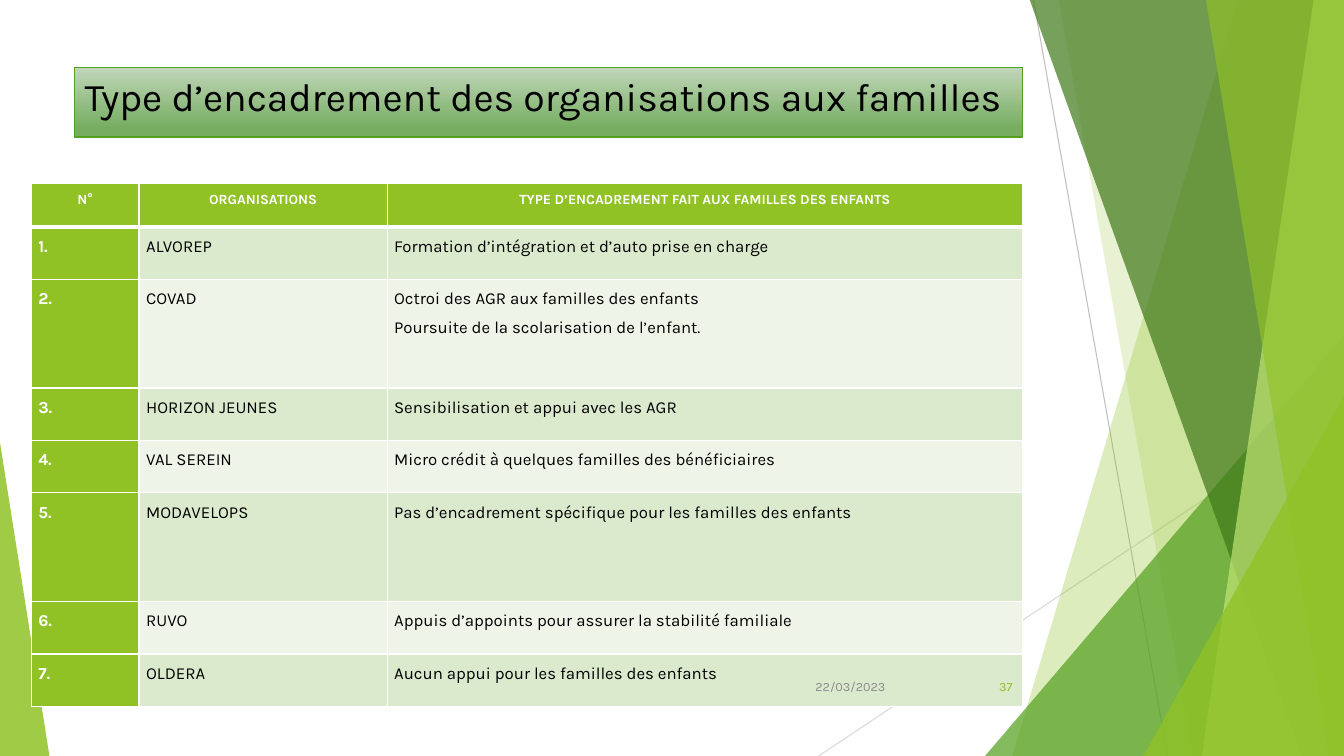
"""Build the slide on how the organisations support the families."""
from lxml import etree
from pptx import Presentation
from pptx import util as u
from pptx.dml.color import RGBColor
from pptx.enum import shapes, text
from pptx.oxml.ns import qn

FONT = "Karla"
WHITE = RGBColor(0xFF, 0xFF, 0xFF)
BLACK = RGBColor(0, 0, 0)
GREY = RGBColor(0x8C, 0x8C, 0x8C)
LINE_GREY = RGBColor(0xBF, 0xBF, 0xBF)
LINE_LIGHT = RGBColor(0xD9, 0xD9, 0xD9)
LIME = RGBColor(0x90, 0xC2, 0x26)
PALE_LIME = RGBColor(0xC0, 0xE4, 0x74)
GREEN = RGBColor(0x54, 0xA0, 0x21)
DARK_GREEN = RGBColor(0x3F, 0x78, 0x19)
TITLE_TOP = RGBColor(0xC0, 0xD6, 0xB9)
TITLE_BOTTOM = RGBColor(0x76, 0xAD, 0x61)
BAND_DARK = RGBColor(0xDB, 0xE9, 0xCD)
BAND_LIGHT = RGBColor(0xEE, 0xF4, 0xE8)
LEFT, CENTER = text.PP_ALIGN.LEFT, text.PP_ALIGN.CENTER
RIGHT, JUSTIFY = text.PP_ALIGN.RIGHT, text.PP_ALIGN.JUSTIFY


def write(tf, content, size, color, bold=False, align=LEFT, spacing=1.0,
          anchor=text.MSO_ANCHOR.TOP):
    tf.word_wrap = True
    tf.vertical_anchor = anchor
    for i, line in enumerate(content.split("\n")):
        p = tf.paragraphs[0] if i == 0 else tf.add_paragraph()
        p.alignment = align
        p.line_spacing = spacing
        r = p.add_run()
        r.text = line
        r.font.name = FONT
        r.font.size = u.Pt(size)
        r.font.bold = bold
        r.font.color.rgb = color


def paint(sp, color, opacity):
    sp.shadow.inherit = False
    sp.line.fill.background()
    sp.fill.solid()
    sp.fill.fore_color.rgb = color
    clr = sp.fill._xPr.find(qn("a:solidFill"))[0]
    etree.SubElement(clr, qn("a:alpha")).set("val", str(opacity * 1000))


prs = Presentation()
prs.slide_width, prs.slide_height = u.Inches(13.33), u.Inches(7.5)
s = prs.slides.add_slide(prs.slide_layouts[6])

for x1, y1, x2, y2, color in [(10.25, 0, 11.58, 7.5, LINE_GREY),
                              (13.33, 4.03, 8.12, 7.5, LINE_LIGHT)]:
    ln = s.shapes.add_connector(shapes.MSO_CONNECTOR.STRAIGHT, u.Inches(x1),
                                u.Inches(y1), u.Inches(x2), u.Inches(y2))
    ln.line.color.rgb = color
    ln.line.width = u.Pt(0.75)
    etree.SubElement(ln._element.spPr, qn("a:effectLst"))

facets = [
    ((12.28, 10.04), LIME, 30),
    ((10.5, 11.83), LIME, 20),
    ((9.77, 3.33, 3.56, 4.17, 1), GREEN, 72),
    ((10.21, 12.91), DARK_GREEN, 70),
    ((13.03, 11.92), PALE_LIME, 70),
    ((11.96, 13.18), LIME, 65),
    ((11.34, 3.93, 1.99, 3.57, 1), LIME, 80),
    ((0, 4.39, 0.49, 3.11, 0), LIME, 85),
]
for geometry, color, opacity in facets:
    if len(geometry) == 2:
        top_x, bottom_x = map(u.Inches, geometry)
        top, right, bottom = u.Inches(-0.01), u.Inches(13.33), u.Inches(7.5)
        fb = s.shapes.build_freeform(top_x, top)
        fb.add_line_segments([(right, top), (right, bottom), (bottom_x, bottom)])
        sp = fb.convert_to_shape()
    else:
        sp = s.shapes.add_shape(shapes.MSO_SHAPE.ISOSCELES_TRIANGLE,
                                *map(u.Inches, geometry[:4]))
        sp.adjustments[0] = geometry[4]
    paint(sp, color, opacity)

title = s.shapes.add_shape(shapes.MSO_SHAPE.RECTANGLE, u.Inches(0.74),
                           u.Inches(0.67), u.Inches(9.4), u.Inches(0.69))
title.shadow.inherit = False
title.fill.gradient()
title.fill.gradient_angle = 270
for stop, position, color in zip(title.fill.gradient_stops, (0, 0.88),
                                 (TITLE_TOP, TITLE_BOTTOM)):
    stop.position = position
    stop.color.rgb = color
title.line.color.rgb = GREEN
title.line.width = u.Pt(1)
write(title.text_frame, "Type d’encadrement des organisations aux familles",
      28, BLACK)

rows = [
    ("N°", "ORGANISATIONS", "TYPE D’ENCADREMENT FAIT AUX FAMILLES DES ENFANTS"),
    ("1.", "ALVOREP", "Formation d’intégration et d’auto prise en charge"),
    ("2.", "COVAD", "Octroi des AGR aux familles des enfants\n"
                    "Poursuite de la scolarisation de l’enfant."),
    ("3.", "HORIZON JEUNES", "Sensibilisation et appui avec les AGR"),
    ("4.", "VAL SEREIN", "Micro crédit à quelques familles des bénéficiaires"),
    ("5.", "MODAVELOPS",
     "Pas d’encadrement spécifique pour les familles des enfants"),
    ("6.", "RUVO", "Appuis d’appoints pour assurer la stabilité familiale"),
    ("7.", "OLDERA", "Aucun appui pour les familles des enfants"),
]
tbl = s.shapes.add_table(len(rows), 3, u.Inches(0.31), u.Inches(1.82),
                         u.Inches(9.83), u.Inches(5.18)).table
for col, width in zip(tbl.columns, (1.07, 2.46, 6.3)):
    col.width = u.Inches(width)
for row, height in zip(tbl.rows, (0.43, 0.52, 1.08, 0.52, 0.52, 1.08, 0.52, 0.52)):
    row.height = u.Inches(height)
for i, row in enumerate(rows):
    for j, content in enumerate(row):
        cell = tbl.cell(i, j)
        header, green = i == 0, i == 0 or j == 0
        cell.margin_left = cell.margin_right = u.Inches(0.07)
        cell.margin_top = cell.margin_bottom = 0
        write(cell.text_frame, content, 10 if header else 12,
              WHITE if green else BLACK, bold=green,
              align=CENTER if header else JUSTIFY, spacing=1.5)
        tcPr = cell._tc.get_or_add_tcPr()
        for side in "LRTB":
            thick = (i, side) in [(0, "B"), (1, "T")]
            edge = etree.SubElement(tcPr, qn(f"a:ln{side}"))
            edge.set("w", str(u.Pt(3 if thick else 1)))
            solid = etree.SubElement(edge, qn("a:solidFill"))
            etree.SubElement(solid, qn("a:srgbClr")).set("val", str(WHITE))
        cell.fill.solid()
        cell.fill.fore_color.rgb = LIME if green else (BAND_LIGHT, BAND_DARK)[i % 2]

for content, x, width, color in [("37", 9.39, 0.75, LIME),
                                 ("22/03/2023", 7.88, 1, GREY)]:
    tb = s.shapes.add_textbox(u.Inches(x), u.Inches(6.61), u.Inches(width),
                              u.Inches(0.4))
    write(tb.text_frame, content, 9, color, align=RIGHT,
          anchor=text.MSO_ANCHOR.MIDDLE)

prs.save("out.pptx")
